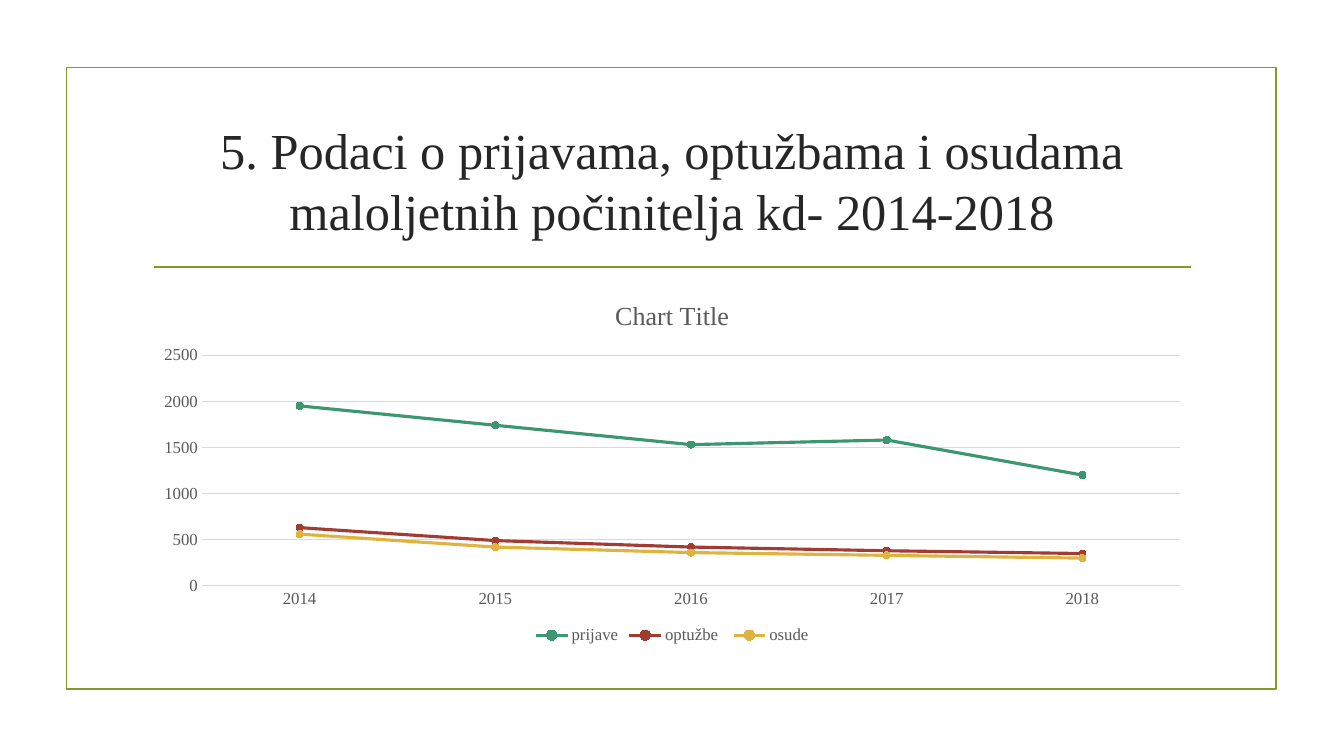
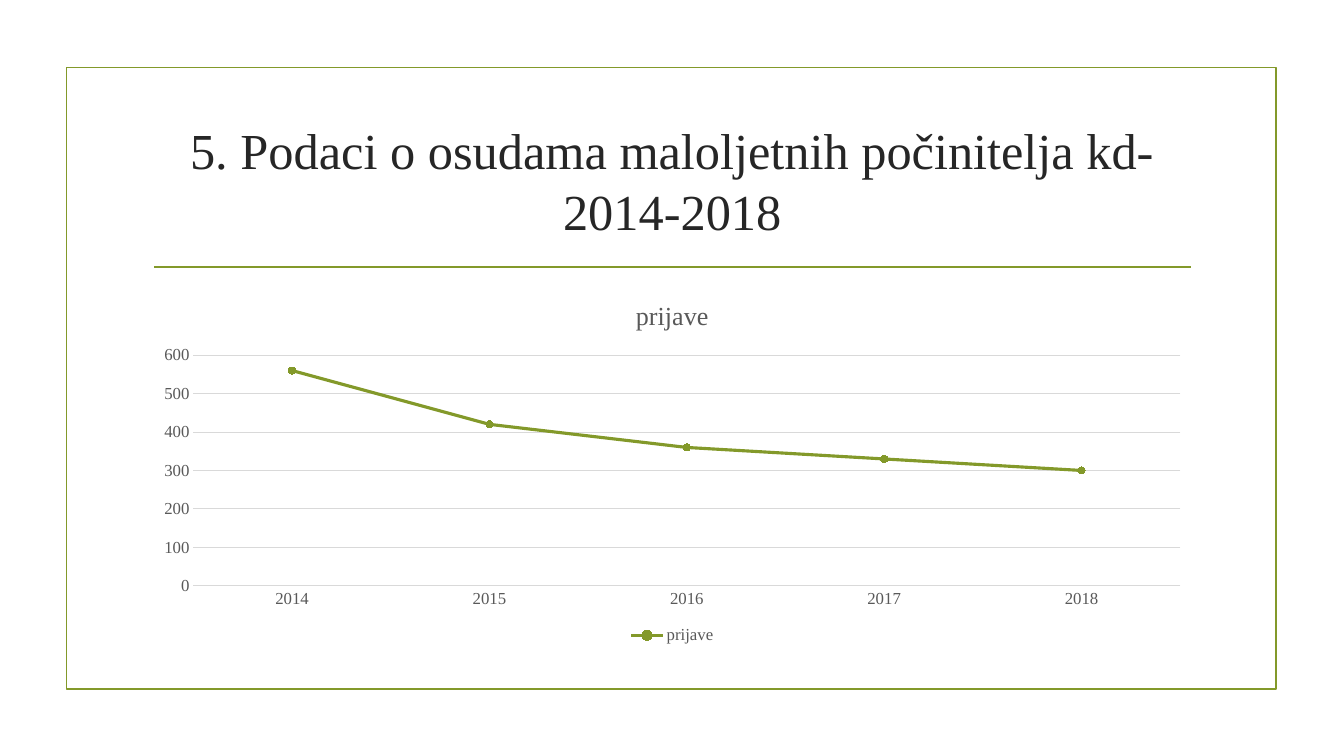
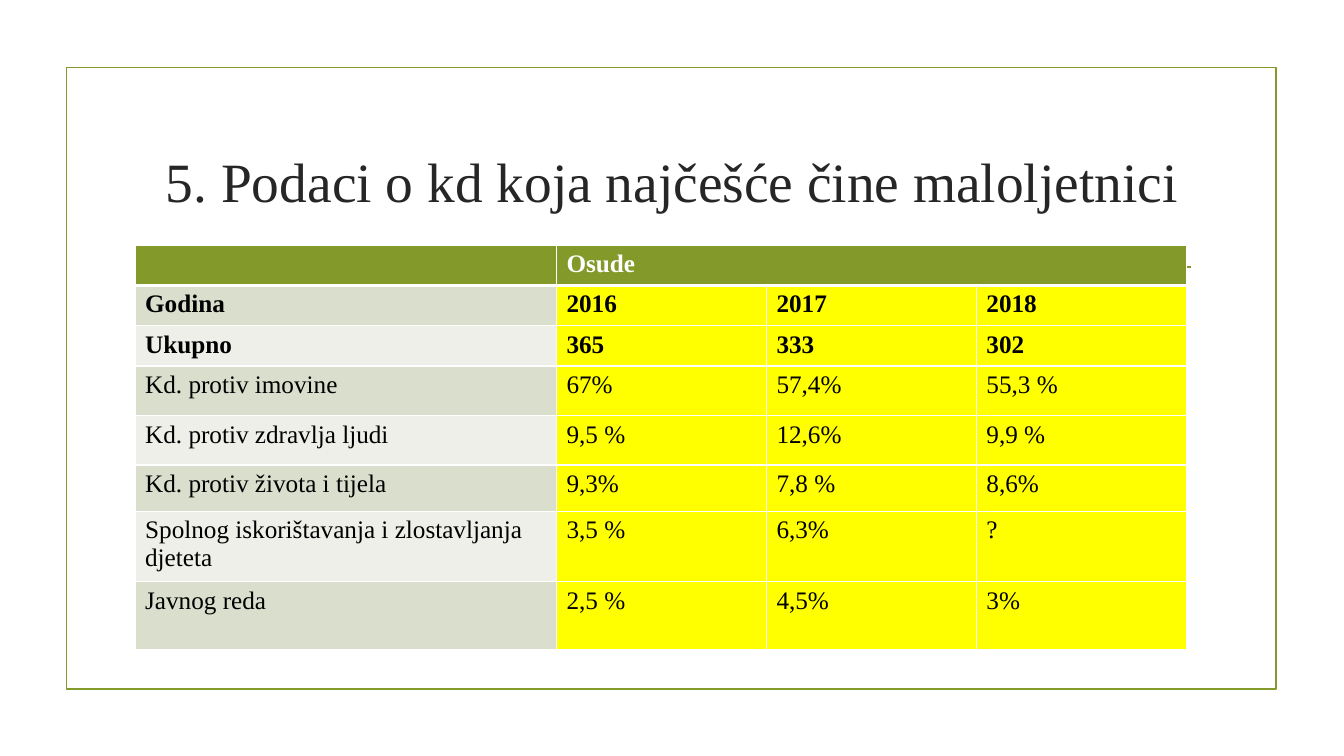
from lxml.etree import SubElement
from pptx import Presentation
from pptx.chart.data import CategoryChartData
from pptx.dml.color import RGBColor
from pptx.enum.chart import XL_CHART_TYPE, XL_LEGEND_POSITION, XL_MARKER_STYLE, XL_TICK_MARK
from pptx.enum.shapes import MSO_CONNECTOR, MSO_SHAPE
from pptx.enum.text import MSO_ANCHOR, PP_ALIGN
from pptx.oxml.ns import qn
from pptx.util import Pt

FONT = "Times New Roman"
COLORS = {
    "olive": "83992A", "title": "262626", "label": "595959", "grid": "D9D9D9",
    "green": "3C9770", "red": "A23C33", "gold": "DEB340", "white": "FFFFFF",
    "black": "000000", "band_dark": "D9DECD", "band_light": "EDEFE8", "yellow": "FFFF00",
}
FRAME_BOX = (47.5, 48.2, 864, 444.2)
TITLE_BOX = (102.2, 77, 756, 103)
RULE_BOX = (110.2, 190.8, 740.2, 0)
CHART_BOX = (102.2, 201.6, 756, 261.4)
TABLE_BOX = (96.5, 175, 751, 288)
YEARS = ("2014", "2015", "2016", "2017", "2018")
CONVICTIONS = (560, 420, 360, 330, 300)
COLUMN_WIDTHS = (301, 150, 150, 150)
ROW_HEIGHTS = (25.2, 25.2, 25.2, 35.3, 35.3, 33.1, 48.2, 48.2)
OFFENCES = (
    ("", "Osude", "", ""),
    ("Godina", "2016", "2017", "2018"),
    ("Ukupno", "365", "333", "302"),
    ("Kd. protiv imovine", "67%", "57,4%", "55,3 %"),
    ("Kd. protiv zdravlja ljudi", "9,5 %", "12,6%", "9,9 %"),
    ("Kd. protiv života i tijela", "9,3%", "7,8 %", "8,6%"),
    ("Spolnog iskorištavanja i zlostavljanja djeteta", "3,5 %", "6,3%", "?"),
    ("Javnog reda", "2,5 %", "4,5%", "3%"),
)


def color(name):
    """Return the named palette colour."""
    return RGBColor.from_string(COLORS[name])


def style_font(font, size, name, bold=False):
    """Apply the deck typeface with a size, colour and weight."""
    font.name, font.size, font.bold = FONT, Pt(size), bold
    font.color.rgb = color(name)


def style_line(line, name, width):
    """Give a line a solid colour and a width."""
    line.color.rgb = color(name)
    line.width = Pt(width)


def add_span(para, text, size, name, bold=False):
    """Add one styled run to a paragraph."""
    span = para.add_run()
    span.text = text
    style_font(span.font, size, name, bold)


def add_frame(page):
    """Draw the border and the rule under the title."""
    border = page.shapes.add_shape(MSO_SHAPE.RECTANGLE, *map(Pt, FRAME_BOX))
    border.shadow.inherit = False
    border.fill.background()
    style_line(border.line, "olive", 1.25)
    left, top, width, height = RULE_BOX
    ends = (left, top, left + width, top + height)
    rule = page.shapes.add_connector(MSO_CONNECTOR.STRAIGHT, *map(Pt, ends))
    style_line(rule.line, "olive", 1.25)
    SubElement(rule._element.spPr, qn("a:effectLst"))


def add_title(page, text, size):
    """Place the centred slide title."""
    frame = page.shapes.add_textbox(*map(Pt, TITLE_BOX)).text_frame
    frame.word_wrap = True
    frame.vertical_anchor = MSO_ANCHOR.MIDDLE
    para = frame.paragraphs[0]
    para.alignment = PP_ALIGN.CENTER
    add_span(para, text, size, "title")


def add_page(deck, title, size=36):
    """Add a slide with the shared frame and title."""
    page = deck.slides.add_slide(deck.slide_layouts[6])
    add_frame(page)
    add_title(page, title, size)
    return page


def add_line_chart(page, box, title, series):
    """Place a marked line chart of yearly counts in a box."""
    data = CategoryChartData()
    data.categories = YEARS
    for name, values, _ in series:
        data.add_series(name, values)
    chart = page.shapes.add_chart(XL_CHART_TYPE.LINE_MARKERS, *map(Pt, box), data).chart
    style_font(chart.font, 10, "black")
    chart.has_title = True
    add_span(chart.chart_title.text_frame.paragraphs[0], title, 18.6, "label")
    chart.chart_title.include_in_layout = False
    chart.has_legend = True
    chart.legend.position = XL_LEGEND_POSITION.BOTTOM
    chart.legend.include_in_layout = False
    style_font(chart.legend.font, 12, "label")
    for axis in (chart.category_axis, chart.value_axis):
        axis.major_tick_mark = axis.minor_tick_mark = XL_TICK_MARK.NONE
        style_font(axis.tick_labels.font, 12, "label")
    style_line(chart.category_axis.format.line, "grid", 0.75)
    chart.value_axis.format.line.fill.background()
    style_line(chart.value_axis.major_gridlines.format.line, "grid", 0.75)
    plot = chart.plots[0]
    plot.vary_by_categories = False
    for line, (_, _, shade) in zip(plot.series, series):
        line.smooth = False
        style_line(line.format.line, shade, 2.25)
        line.marker.style = XL_MARKER_STYLE.CIRCLE
        line.marker.size = 5
        line.marker.format.fill.solid()
        line.marker.format.fill.fore_color.rgb = color(shade)
        style_line(line.marker.format.line, shade, 0.75)


def add_borders(cell, top, bottom):
    """Draw white cell borders with the given top and bottom widths."""
    properties = cell._tc.get_or_add_tcPr()
    for side, width in (("L", 1), ("R", 1), ("T", top), ("B", bottom)):
        edge = SubElement(properties, qn(f"a:ln{side}"), w=str(Pt(width)))
        fill = SubElement(edge, qn("a:solidFill"))
        SubElement(fill, qn("a:srgbClr"), val=COLORS["white"])


def cell_fill(row, column):
    """Name the fill for a table position."""
    if row == 0:
        return "olive"
    if column:
        return "yellow"
    return "band_dark" if row % 2 else "band_light"


def add_offence_table(page, box):
    """Place the table of convictions by offence in a box."""
    table = page.shapes.add_table(len(OFFENCES), len(COLUMN_WIDTHS), *map(Pt, box)).table
    for column, width in zip(table.columns, COLUMN_WIDTHS):
        column.width = Pt(width)
    for row, height in zip(table.rows, ROW_HEIGHTS):
        row.height = Pt(height)
    table.cell(0, 1).merge(table.cell(0, 3))
    for row, texts in enumerate(OFFENCES):
        for column, text in enumerate(texts):
            cell = table.cell(row, column)
            add_borders(cell, 3 if row == 1 else 1, 3 if row == 0 else 1)
            cell.fill.solid()
            cell.fill.fore_color.rgb = color(cell_fill(row, column))
            if text:
                shade = "black" if row else "white"
                add_span(cell.text_frame.paragraphs[0], text, 18, shade, row < 3)


def main():
    """Build and save the deck."""
    deck = Presentation()
    deck.slide_width, deck.slide_height = Pt(960), Pt(540)
    page = add_page(deck, "5. Podaci o prijavama, optužbama i osudama maloljetnih počinitelja kd- 2014-2018")
    add_line_chart(page, CHART_BOX, "Chart Title", (
        ("prijave", (1950, 1740, 1530, 1580, 1200), "green"),
        ("optužbe ", (630, 490, 420, 380, 350), "red"),
        ("osude", CONVICTIONS, "gold"),
    ))
    page = add_page(deck, "5. Podaci o osudama maloljetnih počinitelja kd- 2014-2018")
    add_line_chart(page, CHART_BOX, "prijave", (("prijave", CONVICTIONS, "olive"),))
    page = add_page(deck, "5. Podaci o kd koja najčešće čine maloljetnici", 39.6)
    add_offence_table(page, TABLE_BOX)
    deck.save("out.pptx")


if __name__ == "__main__":
    main()
